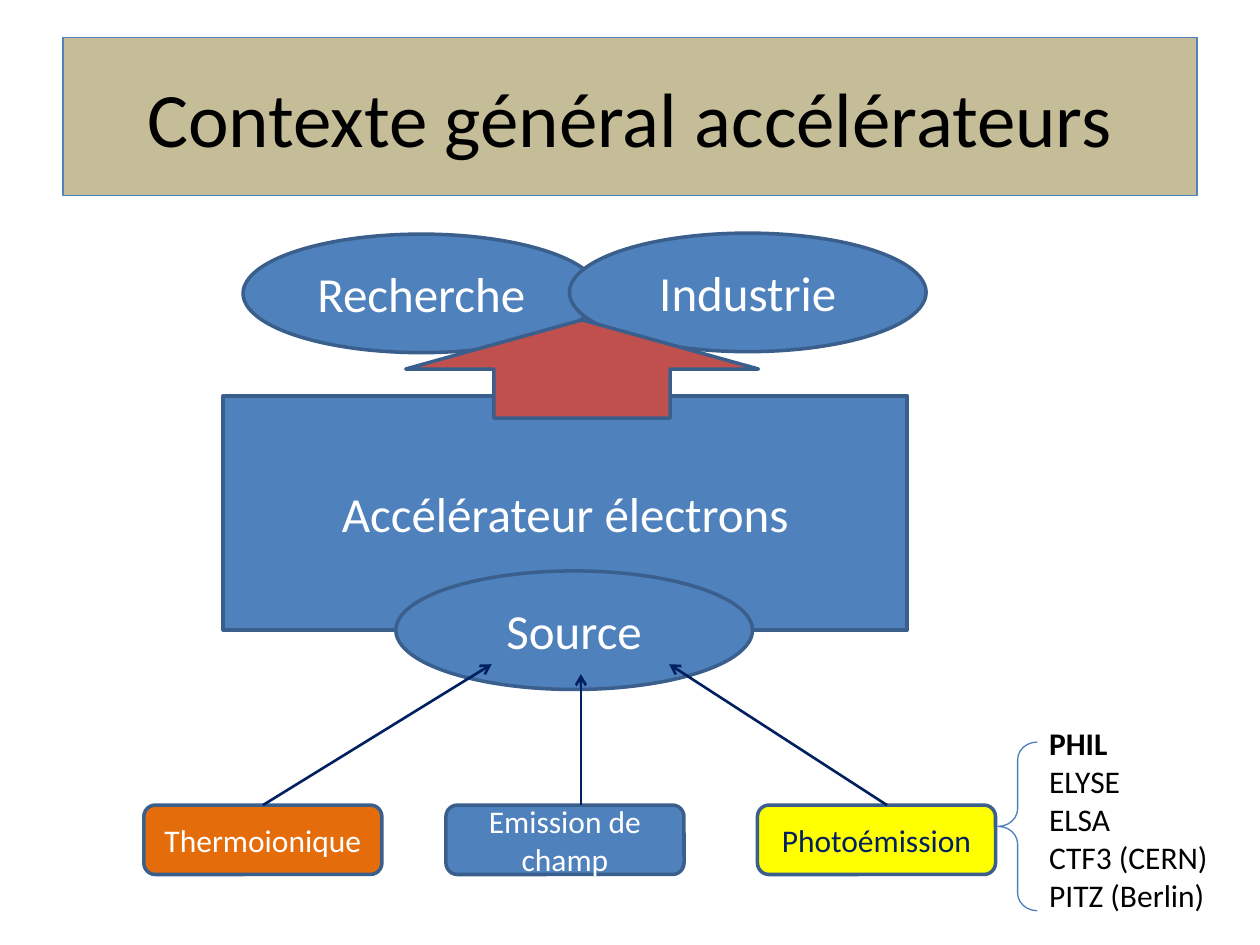
from dataclasses import dataclass

from lxml import etree
from pptx import Presentation
from pptx import util as u
from pptx.dml import color
from pptx.enum import shapes, text
from pptx.oxml import ns

Kind = shapes.MSO_SHAPE


@dataclass(frozen=True)
class Theme:
    """Colours, type sizes and line widths of the slide."""
    font: str = "Calibri"
    sand: str = "C4BD97"
    blue: str = "4F81BD"
    edge: str = "3A5F8C"
    brace: str = "4B7EBC"
    red: str = "C0504D"
    orange: str = "E46C0A"
    yellow: str = "FFFF00"
    navy: str = "002060"
    white: str = "FFFFFF"
    black: str = "000000"
    head: int = 44
    big: int = 28
    small: int = 18
    thin: float = 0.75
    mid: float = 1.5
    thick: float = 2


T = Theme()


def rgb(hue):
    """Turn a hex string into a colour."""
    return color.RGBColor.from_string(hue)


def put(item, **vals):
    """Set each given attribute on an item."""
    for key, val in vals.items():
        setattr(item, key, val)


def spot(item, box):
    """Move an item to a box given in centimetres."""
    put(item, **dict(zip(("left", "top", "width", "height"), map(u.Cm, box))))


def write(item, lines, size, hue, align=text.PP_ALIGN.CENTER, lead=False):
    """Write one paragraph per line, the first bold if it leads."""
    frame = item.text_frame
    frame.text = "\n".join(lines)
    for row, para in enumerate(frame.paragraphs):
        para.alignment = align
        font = para.runs[0].font
        put(font, name=T.font, size=u.Pt(size), bold=lead and row == 0)
        font.color.rgb = rgb(hue)


def paint(item, fill, edge, width):
    """Give an item its fill and outline."""
    if fill:
        item.fill.solid()
        item.fill.fore_color.rgb = rgb(fill)
    else:
        item.fill.background()
    item.line.color.rgb = rgb(edge)
    item.line.width = u.Pt(width)


def shape(slide, kind, box, fill=T.blue, edge=T.edge, width=T.thick,
          label="", size=T.big, hue=T.white):
    """Add a flat shape with an optional centred label."""
    item = slide.shapes.add_shape(kind, *map(u.Cm, box))
    item.shadow.inherit = False
    paint(item, fill, edge, width)
    if label:
        write(item, [label], size, hue)
        item.text_frame.vertical_anchor = text.MSO_ANCHOR.MIDDLE
    return item


def arrow(slide, start, end):
    """Add a straight line with an open head at its end."""
    link = slide.shapes.add_connector(
        shapes.MSO_CONNECTOR.STRAIGHT, *map(u.Cm, start + end))
    link.line.color.rgb = rgb(T.navy)
    link.line.width = u.Pt(T.mid)
    tip = etree.SubElement(link.line._get_or_add_ln(), ns.qn("a:tailEnd"))
    tip.set("type", "arrow")
    etree.SubElement(link._element.spPr, ns.qn("a:effectLst"))
    return link


def title(slide, box):
    """Place and format the title band."""
    item = slide.shapes.title
    spot(item, box)
    paint(item, T.sand, T.blue, T.thin)
    write(item, ["Contexte général accélérateurs"], T.head, T.black)
    item.text_frame.vertical_anchor = text.MSO_ANCHOR.MIDDLE


def machine(slide, box):
    """Draw the accelerator and the source on its lower edge."""
    x, y, w, h = box
    shape(slide, Kind.RECTANGLE, box, label="Accélérateur électrons")
    shape(slide, Kind.OVAL, (x + 3.48, y + h - 1.19, 7.19, 2.39),
          label="Source")


def sources(slide, box):
    """Draw the three emission types and their arrows to the source."""
    x, y, w, h = box
    wide = 4.8
    kinds = (
        ("Thermoionique", T.orange, T.white, 0, 2.4, (7.01, -2.84)),
        ("Emission de champ", T.blue, T.white, 6.09, 8.81, (8.81, -2.64)),
        ("Photoémission", T.yellow, T.navy, w - wide, 14.98, (10.59, -2.84)),
    )
    for label, fill, hue, dx, foot, (tx, ty) in kinds:
        item = shape(slide, Kind.ROUNDED_RECTANGLE, (x + dx, y, wide, h),
                     fill, label=label, size=T.small, hue=hue)
        link = arrow(slide, (x + foot, y), (x + tx, y + ty))
        if foot == dx + wide / 2:
            link.begin_connect(item, 0)


def goals(slide, box):
    """Draw the two fields of use and the arrow that leads to them."""
    x, y, w, h = box
    wide, high = 7.19, 2.39
    for label, dx, dy in (("Recherche", 0, 0.02), ("Industrie", w - wide, 0)):
        shape(slide, Kind.OVAL, (x + dx, y + dy, wide, high), label=label)
    shape(slide, Kind.UP_ARROW, (x + 3.28, y + h - 1.98, 7.11, 1.98), T.red)


def sites(slide, box):
    """List the photoemission sites beside a brace."""
    x, y, w, h = box
    item = slide.shapes.add_textbox(*map(u.Cm, (x + 0.78, y, w - 0.78, h)))
    put(item.text_frame, word_wrap=False,
        auto_size=text.MSO_AUTO_SIZE.SHAPE_TO_FIT_TEXT)
    names = ["PHIL", "ELYSE", "ELSA", "CTF3 (CERN)", "PITZ (Berlin)"]
    write(item, names, T.small, T.black, text.PP_ALIGN.LEFT, lead=True)
    brace = shape(slide, Kind.LEFT_BRACE, (x, y + 0.48, 0.79, 3.4),
                  None, T.brace, T.thin)
    brace.adjustments[0] = 0.45


def main():
    """Build the slide and save it."""
    deck = Presentation()
    put(deck, slide_width=u.Cm(25.4), slide_height=u.Cm(19.05))
    slide = deck.slides.add_slide(deck.slide_layouts[5])
    title(slide, (1.27, 0.76, 22.86, 3.18))
    machine(slide, (4.5, 7.98, 13.79, 4.72))
    sources(slide, (2.9, 16.23, 17.17, 1.4))
    goals(slide, (4.9, 4.7, 13.77, 3.73))
    sites(slide, (20.12, 14.48, 4.51, 4.1))
    deck.save("out.pptx")


if __name__ == "__main__":
    main()
